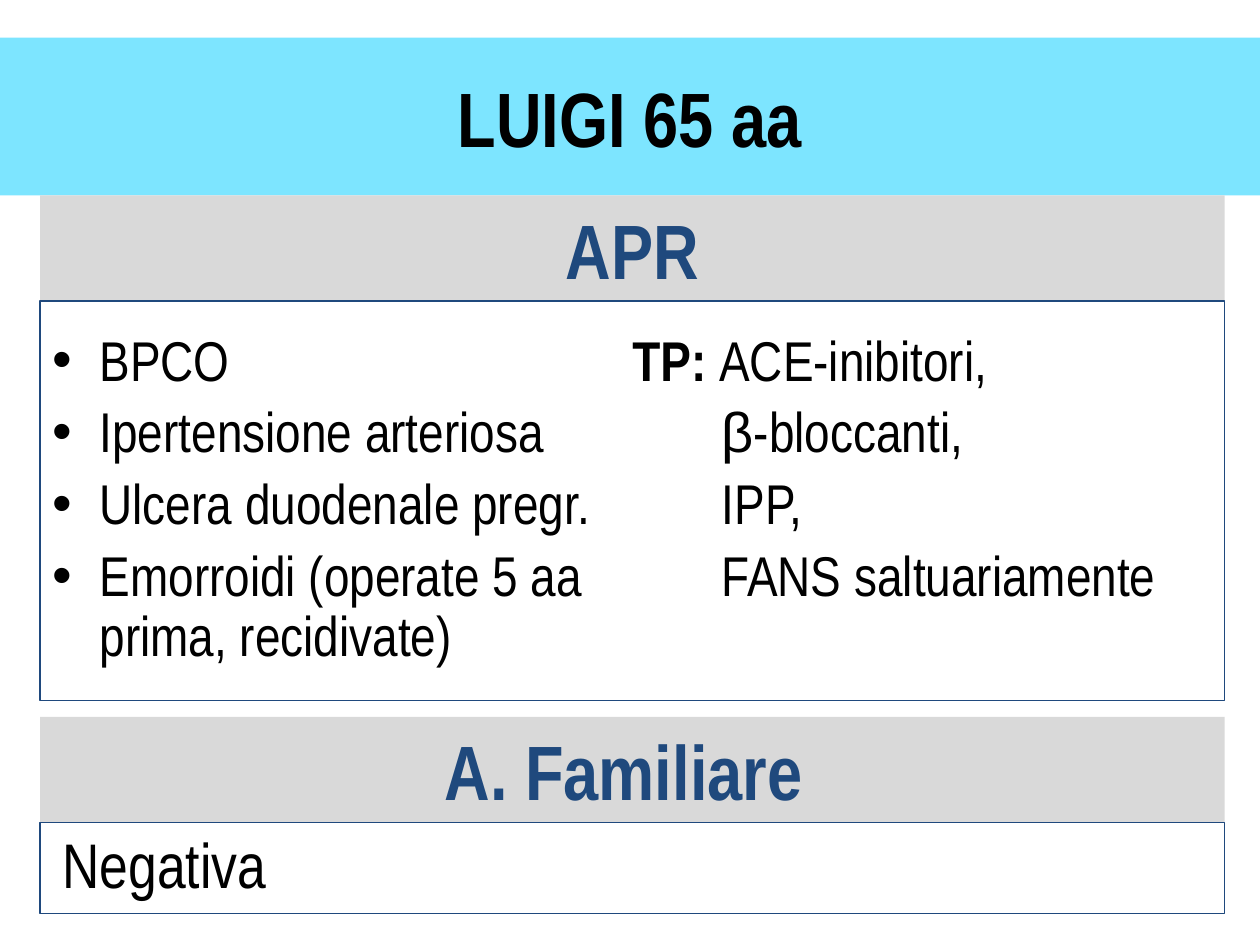
from dataclasses import dataclass

from lxml.etree import SubElement
from pptx import Presentation
from pptx.dml.color import RGBColor
from pptx.enum.shapes import MSO_SHAPE
from pptx.enum.text import MSO_ANCHOR, PP_ALIGN
from pptx.oxml.ns import qn
from pptx.util import Cm, Pt

BLACK = RGBColor(0x00, 0x00, 0x00)
NAVY = RGBColor(0x1F, 0x49, 0x7D)
GREY = RGBColor(0xD9, 0xD9, 0xD9)
CYAN = RGBColor(0x00, 0xCC, 0xFF)

FONT = "Arial Narrow"
WIDE = Cm(25.4)
LEFT, WIDTH = Cm(0.81), Cm(23.88)
HANG = Cm(0.95)


@dataclass
class Line:
    text: str
    lead: str = ""
    bold: bool = False  # applies to the lead
    font: str = FONT  # font of the lead
    left: int = 0
    dot: bool = False


@dataclass
class Part:
    """A grey heading with a framed text below it."""
    top: int
    head: str
    high: int
    size: int
    lines: list[Line]


HEAD = Cm(2.13)
TAB = Cm(1.8)
PARTS = [
    Part(Cm(3.94), "APR", Cm(8.05), 32, [
        Line("BPCO", left=HANG, dot=True),
        Line("Ipertensione arteriosa", left=HANG, dot=True),
        Line("Ulcera duodenale pregr.", left=HANG, dot=True),
        Line("Emorroidi (operate 5 aa prima, recidivate)", left=HANG, dot=True),
        Line("ACE-inibitori,", lead="TP: ", bold=True),
        Line("-bloccanti,", lead="β", font="Arial", left=TAB),
        Line("IPP,", left=TAB),
        Line("FANS saltuariamente", left=TAB),
    ]),
    Part(Cm(14.45), "A. Familiare ", Cm(1.83), 36, [
        Line("Negativa", left=Cm(0.2)),
    ]),
]


def add_box(slide, left: int, top: int, width: int, high: int):
    box = slide.shapes.add_shape(MSO_SHAPE.RECTANGLE, left, top, width, high)
    box.shadow.inherit = False
    box.text_frame.word_wrap = True
    box.text_frame.vertical_anchor = MSO_ANCHOR.MIDDLE
    return box


def style(run, size: int, color: RGBColor, bold: bool = False,
          name: str = FONT) -> None:
    run.font.size = Pt(size)
    run.font.color.rgb = color
    run.font.bold = bold
    run.font.name = name


def add_band(slide, left: int, top: int, width: int, high: int,
             text: str, fill: RGBColor, color: RGBColor):
    """Add a filled bar with a centred bold heading."""
    band = add_box(slide, left, top, width, high)
    band.fill.solid()
    band.fill.fore_color.rgb = fill
    band.line.fill.background()
    band.text_frame.text = text
    para = band.text_frame.paragraphs[0]
    para.alignment = PP_ALIGN.CENTER
    style(para.runs[0], 44, color, bold=True)
    return band


def fade(shape, share: int) -> None:
    """Make the solid fill show at the given percentage."""
    color = shape.fill._xPr.find(qn("a:solidFill"))[0]
    SubElement(color, qn("a:alpha")).set("val", str(share * 1000))


def write(para, line: Line, size: int) -> None:
    para.text = line.lead or line.text
    if line.lead:
        para.add_run().text = line.text
    for run in para.runs:
        style(run, size, BLACK)
    if line.lead:
        style(para.runs[0], size, BLACK, line.bold, line.font)
    para.alignment = PP_ALIGN.LEFT
    para.line_spacing = 0.9
    para.space_before = Pt(size * 0.2)
    props = para._p.get_or_add_pPr()
    props.set("marL", str(line.left))
    if line.dot:
        props.set("indent", str(-HANG))
        SubElement(props, qn("a:buFont")).set("typeface", "Arial")
        SubElement(props, qn("a:buChar")).set("char", "•")


def add_part(slide, part: Part) -> None:
    add_band(slide, LEFT, part.top, WIDTH, HEAD, part.head, GREY, NAVY)
    box = add_box(slide, LEFT, part.top + HEAD, WIDTH, part.high)
    box.fill.background()
    box.line.color.rgb = NAVY
    box.line.width = Pt(0.75)
    frame = box.text_frame
    frame._txBody.bodyPr.set("numCol", "2")
    for num, line in enumerate(part.lines):
        para = frame.add_paragraph() if num else frame.paragraphs[0]
        write(para, line, part.size)


def main() -> None:
    deck = Presentation()
    deck.slide_width, deck.slide_height = WIDE, Cm(19.05)
    slide = deck.slides.add_slide(deck.slide_layouts[6])
    title = add_band(slide, 0, Cm(0.76), WIDE, Cm(3.18),
                     "LUIGI 65 aa", CYAN, BLACK)
    fade(title, 51)
    for part in PARTS:
        add_part(slide, part)
    deck.save("out.pptx")


if __name__ == "__main__":
    main()
